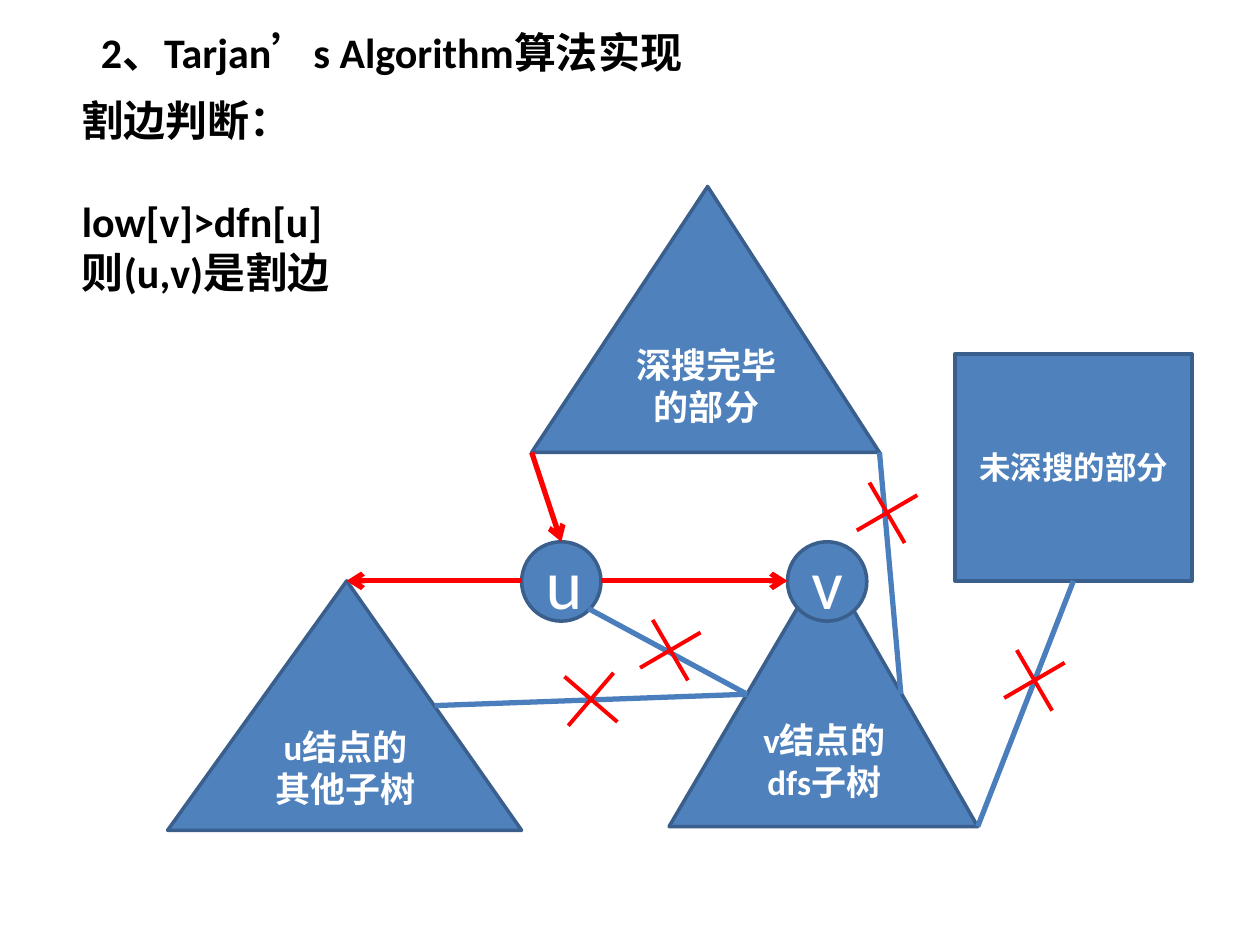
from dataclasses import dataclass

from pptx import Presentation
from pptx.dml.color import RGBColor
from pptx.enum.shapes import MSO_CONNECTOR as Link, MSO_SHAPE as Shape
from pptx.enum.text import MSO_ANCHOR as Anchor, MSO_AUTO_SIZE as AutoSize, PP_ALIGN as Align
from pptx.oxml.ns import qn
from pptx.util import Inches, Pt


@dataclass(frozen=True)
class Theme:
    font: str = "Calibri"
    ink: str = "000000"
    paper: str = "FFFFFF"
    fill: str = "4F81BD"
    outline: str = "3A5F8C"
    edge: str = "4B7EBC"
    accent: str = "FF0000"
    heading: int = 24
    label: int = 20
    small: int = 18
    node: int = 40
    outline_width: float = 2
    edge_width: float = 3
    cross_width: float = 2.25


def apply(target, values):
    for name, value in values.items():
        setattr(target, name, value)


def place(shape, left, top, width, height):
    names = ("left", "top", "width", "height")
    apply(shape, dict(zip(names, map(Inches, (left, top, width, height)))))


class SlideBuilder:
    def __init__(self, page, theme):
        self.page = page
        self.theme = theme

    def span(self, para, text, size, color, bold=True):
        span = para.add_run()
        span.text = text
        apply(span.font, {"name": self.theme.font, "size": Pt(size), "bold": bold})
        span.font.color.rgb = RGBColor.from_string(color)

    def text(self, box, bounds, lines):
        place(box, *bounds)
        frame = box.text_frame
        apply(frame, {"word_wrap": True, "auto_size": AutoSize.NONE,
                      "vertical_anchor": Anchor.TOP})
        for index, (line, gap) in enumerate(lines):
            para = frame.add_paragraph() if index else frame.paragraphs[0]
            apply(para, {"alignment": Align.LEFT, "space_before": Pt(gap)})
            props = para._p.get_or_add_pPr()
            props.set("marL", "0")
            props.set("indent", "0")
            props.append(props.makeelement(qn("a:buNone"), {}))
            self.span(para, line, self.theme.heading, self.theme.ink)

    def shape(self, kind, bounds, text, size, bold=True):
        box = self.page.shapes.add_shape(kind, *map(Inches, bounds))
        box.shadow.inherit = False
        box.fill.solid()
        box.fill.fore_color.rgb = RGBColor.from_string(self.theme.fill)
        box.line.color.rgb = RGBColor.from_string(self.theme.outline)
        box.line.width = Pt(self.theme.outline_width)
        apply(box.text_frame, {"word_wrap": True, "vertical_anchor": Anchor.MIDDLE})
        para = box.text_frame.paragraphs[0]
        para.alignment = Align.CENTER
        self.span(para, text, size, self.theme.paper, bold)
        return box

    def triangle(self, bounds, text):
        box = self.shape(Shape.ISOSCELES_TRIANGLE, bounds, text, self.theme.label)
        box.adjustments[0] = 0.506

    def node(self, left, top, text):
        return self.shape(Shape.OVAL, (left, top, 0.63, 0.63), text, self.theme.node, False)

    def line(self, shapes, start, end, color, width):
        line = shapes.add_connector(Link.STRAIGHT, *map(Inches, start + end))
        line.line.color.rgb = RGBColor.from_string(color)
        line.line.width = Pt(width)
        props = line._element.spPr
        props.append(props.makeelement(qn("a:effectLst"), {}))
        return line

    def edge(self, start, end):
        return self.line(self.page.shapes, start, end, self.theme.edge, self.theme.edge_width)

    def arrow(self, start, end):
        arrow = self.line(self.page.shapes, start, end, self.theme.accent, self.theme.edge_width)
        stroke = arrow._element.spPr.find(qn("a:ln"))
        stroke.append(stroke.makeelement(qn("a:tailEnd"), {"type": "arrow"}))
        return arrow

    def cross(self, x, y, dx, dy):
        group = self.page.shapes.add_group_shape()
        for across, down in ((dx, dy), (dy, -dx)):
            self.line(group.shapes, (x - across, y - down), (x + across, y + down),
                      self.theme.accent, self.theme.cross_width)


def main():
    deck = Presentation()
    deck.slide_width, deck.slide_height = Inches(10), Inches(7.5)
    page = deck.slides.add_slide(deck.slide_layouts[1])
    theme = Theme()
    slide = SlideBuilder(page, theme)

    slide.text(page.shapes.title, (0.7, 0.16, 7.11, 0.5),
               [("2、Tarjan’s Algorithm算法实现", 0)])
    slide.text(page.placeholders[1], (0.55, 0.7, 2.97, 1.72),
               [("割边判断：", 0), ("low[v]>dfn[u]", 29), ("则(u,v)是割边", 0)])

    slide.triangle((4.22, 1.48, 2.76, 2.11), "深搜完毕的部分")
    slide.triangle((5.31, 4.45, 2.45, 2.11), "v结点的dfs子树")
    slide.triangle((1.33, 4.61, 2.81, 1.98), "u结点的其他子树")
    node_u = slide.node(4.14, 4.3, "u")
    slide.node(6.25, 4.3, "v")
    unvisited = slide.shape(Shape.RECTANGLE, (7.58, 2.81, 1.88, 1.8), "未深搜的部分", theme.small)

    slide.arrow((4.77, 4.61), (6.25, 4.61))
    slide.arrow((4.14, 4.61), (2.75, 4.61))
    slide.arrow((4.22, 3.59), (4.45, 4.3)).end_connect(node_u, 0)

    slide.edge((4.67, 4.83), (5.93, 5.51))
    slide.edge((5.93, 5.51), (3.45, 5.6))
    slide.edge((7.15, 5.51), (6.98, 3.59))
    slide.edge((7.76, 6.56), (8.52, 4.61)).end_connect(unvisited, 2)

    for x, y in ((8.21, 5.4), (7.04, 4.07), (5.32, 5.16)):
        slide.cross(x, y, 0.14, 0.24)
    slide.cross(4.69, 5.55, 0.21, 0.18)

    deck.save("out.pptx")


if __name__ == "__main__":
    main()
